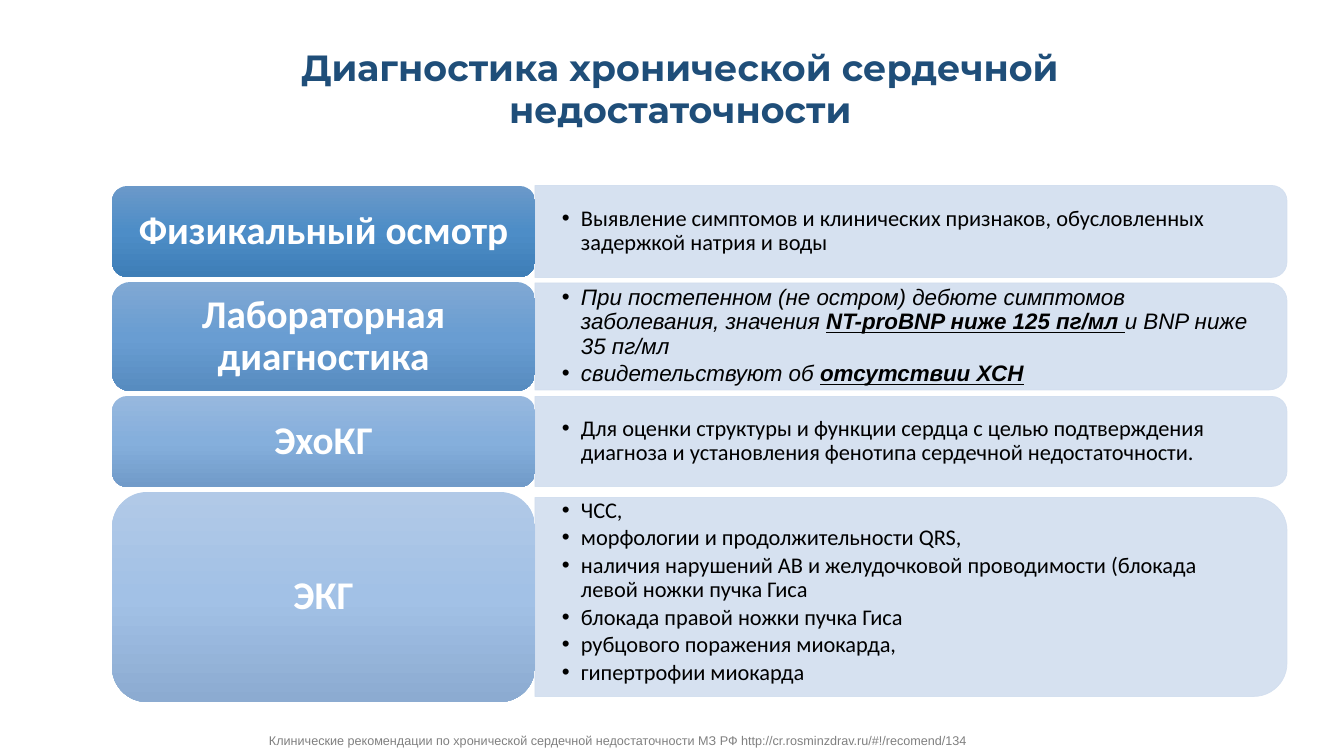
"""Build a slide on the diagnosis of chronic heart failure."""
from pptx import Presentation
from pptx.dml.color import RGBColor
from pptx.enum.shapes import MSO_SHAPE
from pptx.enum.text import MSO_ANCHOR, MSO_AUTO_SIZE, PP_ALIGN
from pptx.oxml import parse_xml
from pptx.oxml.ns import nsdecls, qn
from pptx.util import Pt

TITLE = "Диагностика хронической сердечной недостаточности"
SOURCE = ("Клинические рекомендации по хронической сердечной недостаточности МЗ РФ "
          "http://cr.rosminzdrav.ru/#!/recomend/134")
ROWS = [
    dict(name="Физикальный осмотр", tall=91, panel=92, lift=0, font="Calibri",
         fade=("6B99C9", "4D8DC7", "3E7EB7"),
         items=[["Выявление симптомов и клинических признаков, обусловленных "
                 "задержкой натрия и воды"]]),
    dict(name="Лабораторная диагностика", tall=109, panel=107, lift=0, font="Arial",
         fade=("80A8D3", "699DD2", "578CC0"),
         items=[["При постепенном (не остром) дебюте симптомов заболевания, значения ",
                 "NT-proBNP ниже 125 пг/мл ", "и BNP ниже 35 пг/мл"],
                ["свидетельствуют об ", "отсутствии ХСН"]]),
    dict(name="ЭхоКГ", tall=91, panel=90, lift=0, font="Calibri",
         fade=("97B8DE", "85AFDC", "719BC9"),
         items=[["Для оценки структуры и функции сердца с целью подтверждения "
                 "диагноза и установления фенотипа сердечной недостаточности."]]),
    dict(name="ЭКГ", tall=210, panel=199, lift=5, font="Calibri",
         fade=("B1C9E7", "A2C1E6", "8CABD1"),
         items=[["ЧСС,"], ["морфологии и продолжительности QRS,"],
                ["наличия нарушений АВ и желудочковой проводимости "
                 "(блокада левой ножки пучка Гиса"],
                ["блокада правой ножки пучка Гиса"],
                ["рубцового поражения миокарда,"], ["гипертрофии миокарда"]]),
]
HEX = dict(title="1F4E79", source="808080", panel="D2DEEF", text="000000", name="FFFFFF")
WIDE, HIGH = 1344, 756
SCALE = 12192000 / WIDE
LEFT, TOP, GAP = 112, 186, 5
TILE, PANEL, TEXT = 423, 752, 746


def px(num):
    return round(num * SCALE)


def put(obj, **vals):
    for key, val in vals.items():
        setattr(obj, key, val)


def ink(font, hue, **vals):
    put(font, **vals)
    font.color.rgb = RGBColor.from_string(HEX[hue])


def frame(shape, side, edge, **vals):
    put(shape.text_frame, margin_left=px(side), margin_right=px(side),
        margin_top=px(edge), margin_bottom=px(edge), **vals)
    return shape.text_frame


def draw_panel(shapes, mid, high):
    left = LEFT + TILE + (PANEL - high) / 2
    shape = shapes.add_shape(MSO_SHAPE.ROUND_2_SAME_RECTANGLE, px(left),
                             px(mid - PANEL / 2), px(high), px(PANEL))
    shape.rotation = 90
    shape.shadow.inherit = False
    shape.fill.solid()
    shape.line.width = Pt(0.5)
    for fill in (shape.fill, shape.line.fill):
        fill.solid()
        fill.fore_color.rgb = RGBColor.from_string(HEX["panel"])
    for hue in shape.element.spPr.iter(qn("a:srgbClr")):
        hue.append(parse_xml(f'<a:alpha {nsdecls("a")} val="90000"/>'))


def draw_list(shapes, mid, row):
    high = row["panel"]
    box = shapes.add_textbox(px(LEFT + TILE), px(mid - high / 2 - row["lift"]),
                             px(TEXT), px(high))
    body = frame(box, 27, 0, word_wrap=True, vertical_anchor=MSO_ANCHOR.MIDDLE)
    for num, item in enumerate(row["items"]):
        para = body.add_paragraph() if num else body.paragraphs[0]
        props = para._p.get_or_add_pPr()
        props.set("marL", str(px(19)))
        props.set("indent", str(px(-19)))
        props.append(parse_xml(f'<a:buFont {nsdecls("a")} typeface="Arial"/>'))
        props.append(parse_xml(f'<a:buChar {nsdecls("a")} char="•"/>'))
        put(para, level=1, line_spacing=0.9, space_after=Pt(2.4))
        for turn, words in enumerate(item):
            run = para.add_run()
            run.text = words
            key = turn % 2 == 1
            ink(run.font, "text", name=row["font"], size=Pt(16), bold=key,
                underline=key, italic=row["font"] == "Arial")


def draw_tile(shapes, top, row):
    shape = shapes.add_shape(MSO_SHAPE.ROUNDED_RECTANGLE, px(LEFT), px(top),
                             px(TILE), px(row["tall"]))
    shape.shadow.inherit = False
    shape.line.fill.background()
    shape.fill.gradient()
    shape.fill.gradient_angle = 270
    stops = shape.element.spPr.find(qn("a:gradFill")).find(qn("a:gsLst"))
    for stop in list(stops):
        stops.remove(stop)
    for num, hue in enumerate(row["fade"]):
        stops.append(parse_xml(f'<a:gs {nsdecls("a")} pos="{num * 50000}">'
                               f'<a:srgbClr val="{hue}"/></a:gs>'))
    body = frame(shape, 12, 6, word_wrap=True, vertical_anchor=MSO_ANCHOR.MIDDLE)
    para = body.paragraphs[0]
    para.text = row["name"]
    put(para, alignment=PP_ALIGN.CENTER, line_spacing=0.9)
    ink(para.runs[0].font, "name", name="Calibri", size=Pt(28), bold=True)


def main():
    deck = Presentation()
    put(deck, slide_width=px(WIDE), slide_height=px(HIGH))
    slide = deck.slides.add_slide(deck.slide_layouts[5])
    shapes = slide.shapes

    title = shapes.title
    put(title, left=px(128), top=px(-7), width=px(1105), height=px(194))
    body = frame(title, 10, 5, word_wrap=True, vertical_anchor=MSO_ANCHOR.MIDDLE)
    para = body.paragraphs[0]
    para.text = TITLE
    put(para, alignment=PP_ALIGN.CENTER, line_spacing=0.95)
    ink(para.runs[0].font, "title", name="Montserrat", size=Pt(26), bold=True)

    foot = shapes.add_textbox(px(259), px(728), px(728), px(25))
    body = frame(foot, 10, 5, word_wrap=False, auto_size=MSO_AUTO_SIZE.SHAPE_TO_FIT_TEXT)
    body.text = SOURCE
    ink(body.paragraphs[0].runs[0].font, "source", name="Arial", size=Pt(9))

    top = TOP
    for row in ROWS:
        mid = top + row["tall"] / 2
        draw_panel(shapes, mid, row["panel"])
        draw_list(shapes, mid, row)
        draw_tile(shapes, top, row)
        top += row["tall"] + GAP

    deck.save("out.pptx")


if __name__ == "__main__":
    main()
